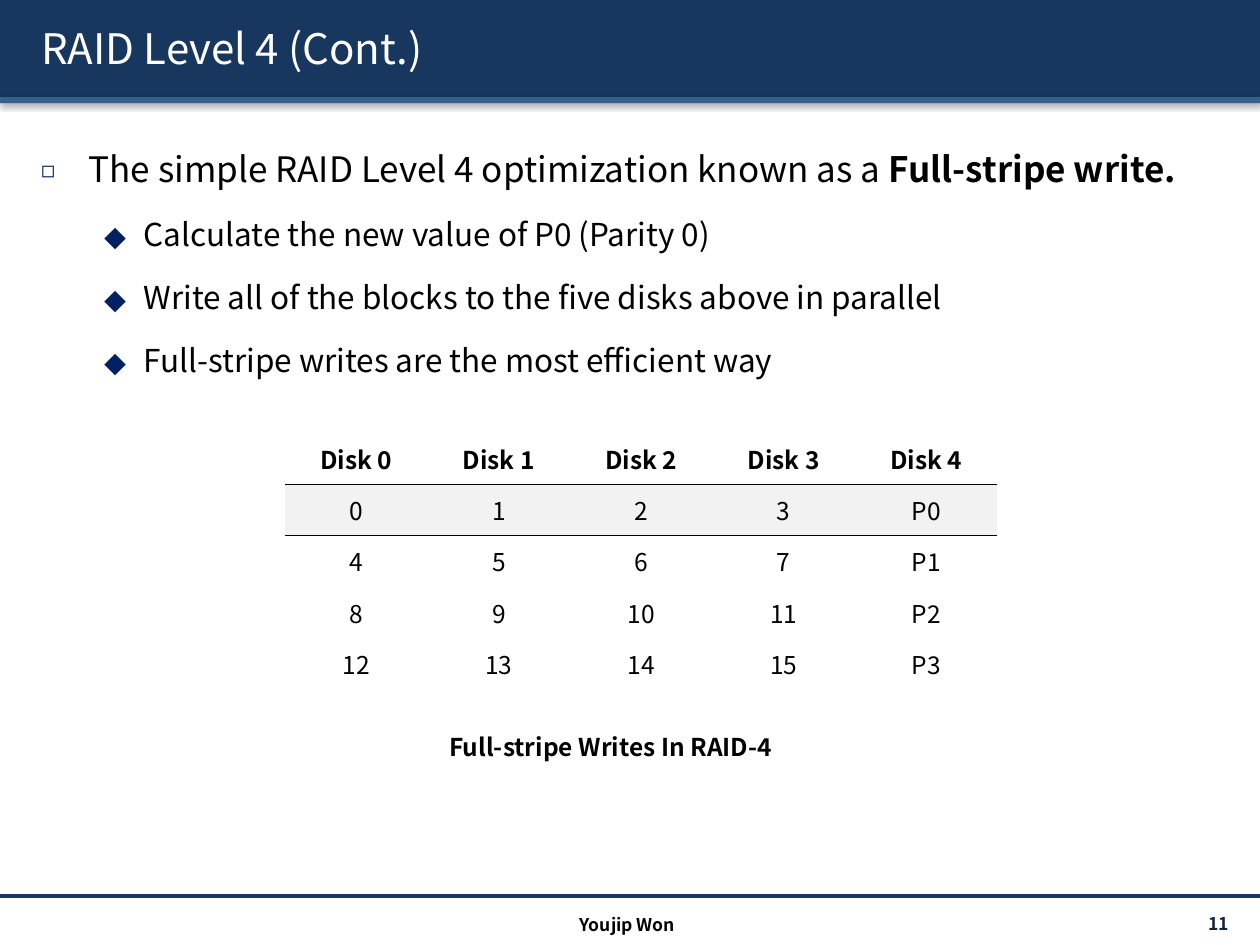
import pptx
import pptx.dml.color
import pptx.enum.shapes
import pptx.enum.text
import pptx.oxml
import pptx.oxml.ns
import pptx.util
from lxml import etree

Pt = pptx.util.Pt
RGBColor = pptx.dml.color.RGBColor
ALIGN = pptx.enum.text.PP_ALIGN
ANCHOR = pptx.enum.text.MSO_ANCHOR

NAVY = RGBColor(0x17, 0x37, 0x5E)
BLUE = RGBColor(0x37, 0x60, 0x92)
BULLET = RGBColor(0x00, 0x20, 0x60)
PAGE_INK = RGBColor(0x0F, 0x24, 0x3E)
BLACK = RGBColor(0, 0, 0)
WHITE = RGBColor(0xFF, 0xFF, 0xFF)
STRIPE = RGBColor(0xF2, 0xF2, 0xF2)
PLAIN_TABLE = "{2D5ABB26-0587-4C30-8999-92F81FD0307C}"


def add_xml(parent, tag, **attributes):
    return etree.SubElement(parent, pptx.oxml.ns.qn(tag), attributes)


def set_values(target, values):
    for name, value in values.items():
        setattr(target, name, value)


def add_shadow(properties, blur, distance, alpha):
    effects = add_xml(properties, "a:effectLst")
    shadow = add_xml(effects, "a:outerShdw", blurRad=str(Pt(blur)),
                     dist=str(Pt(distance)), dir="5400000", rotWithShape="0")
    color = add_xml(shadow, "a:srgbClr", val=str(BLACK))
    add_xml(color, "a:alpha", val=str(alpha * 1000))


class SlideWriter:
    """Holds the text style and the slide being drawn."""

    font = "Noto Sans CJK KR"

    def __init__(self, slide):
        self.slide = slide

    def style(self, font, size, color=BLACK, bold=False):
        set_values(font, {"name": self.font, "size": Pt(size), "bold": bold})
        font.color.rgb = color

    def bar(self, top, height, color):
        band = self.slide.shapes.add_shape(
            pptx.enum.shapes.MSO_SHAPE.RECTANGLE, 0, Pt(top), Pt(720), Pt(height))
        band.fill.solid()
        band.fill.fore_color.rgb = color
        band.line.fill.background()
        add_shadow(band.element.spPr, 3.1, 1.6, 38)

    def rule(self, top, color, width):
        edge = self.slide.shapes.add_connector(
            pptx.enum.shapes.MSO_CONNECTOR.STRAIGHT, 0, Pt(top), Pt(720), Pt(top))
        edge.line.color.rgb = color
        edge.line.width = Pt(width)
        add_xml(edge.element.spPr, "a:effectLst")

    def frame(self, box, **values):
        frame = self.slide.shapes.add_textbox(*map(Pt, box)).text_frame
        set_values(frame, {"word_wrap": True, **values})
        return frame

    def label(self, box, text, size, color=BLACK, bold=True, align=ALIGN.CENTER, **values):
        paragraph = self.frame(box, **values).paragraphs[0]
        paragraph.alignment = align
        run = paragraph.add_run()
        run.text = text
        self.style(run.font, size, color, bold)
        return run

    def bullets(self, box, items, formats):
        frame = self.frame(box)
        for index, (level, parts) in enumerate(items):
            look = formats[level]
            paragraph = frame.paragraphs[0] if index == 0 else frame.add_paragraph()
            set_values(paragraph, {"level": level, "line_spacing": 1.5,
                                   "space_before": Pt(look["size"] * 0.2 if index else 0)})
            properties = paragraph._p.get_or_add_pPr()
            properties.set("marL", str(Pt(look["margin"])))
            properties.set("indent", str(-Pt(look["hang"])))
            add_xml(add_xml(properties, "a:buClr"), "a:srgbClr", val=str(BULLET))
            add_xml(properties, "a:buSzPct", val=str(look["scale"] * 1000))
            add_xml(properties, "a:buFont", typeface=self.font)
            add_xml(properties, "a:buChar", char=look["mark"])
            for text, bold in parts:
                run = paragraph.add_run()
                run.text = text
                self.style(run.font, look["size"], BLACK, bold)

    def table(self, box, rows, fills):
        frame = self.slide.shapes.add_table(len(rows), len(rows[0]), *map(Pt, box))
        grid = frame.table
        set_values(grid, {"first_row": False, "horz_banding": False})
        grid._tbl.tblPr.find(pptx.oxml.ns.qn("a:tableStyleId")).text = PLAIN_TABLE
        for r, values in enumerate(rows):
            for c, value in enumerate(values):
                cell = grid.cell(r, c)
                cell.text = value
                cell.vertical_anchor = ANCHOR.MIDDLE
                paragraph = cell.text_frame.paragraphs[0]
                paragraph.alignment = ALIGN.CENTER
                self.style(paragraph.runs[0].font, 14, BLACK, r == 0)
                if r < 2:
                    self.border(cell, "a:lnT" if r else "a:lnB")
                cell.fill.solid()
                cell.fill.fore_color.rgb = fills[r]

    def border(self, cell, side):
        line = add_xml(cell._tc.get_or_add_tcPr(), side, w=str(Pt(0.75)))
        add_xml(add_xml(line, "a:solidFill"), "a:srgbClr", val=str(BLACK))


def main():
    deck = pptx.Presentation()
    set_values(deck, {"slide_width": Pt(720), "slide_height": Pt(540)})
    page = SlideWriter(deck.slides.add_slide(deck.slide_layouts[6]))

    # Header bands and footer rule
    page.bar(0, 55.5, NAVY)
    page.bar(55.5, 3.5, BLUE)
    page.rule(512, NAVY, 2)

    # Title
    title = page.label((16.5, 4.5, 692, 46), "RAID Level 4 (Cont.)", 24, WHITE, False,
                       ALIGN.LEFT, vertical_anchor=ANCHOR.MIDDLE)
    fill = title.font._element.find(pptx.oxml.ns.qn("a:solidFill"))
    add_shadow(title.font._element, 3, 2, 50)
    fill.addnext(title.font._element.find(pptx.oxml.ns.qn("a:effectLst")))

    # Key points
    formats = [
        {"size": 20, "margin": 27, "hang": 27, "mark": "◻", "scale": 65},
        {"size": 18, "margin": 58.5, "hang": 22.5, "mark": "⬥", "scale": 100},
    ]
    page.bullets((16.5, 69, 692, 433.5), [
        (0, [("The simple RAID Level 4 optimization known as a ", False),
             ("Full-stripe write.", True)]),
        (1, [("Calculate the new value of P0 (Parity 0)", False)]),
        (1, [("Write all of the blocks to the five disks above in parallel", False)]),
        (1, [("Full-stripe writes are the most efficient way", False)]),
    ], formats)

    # Block layout: four data disks and one parity disk
    data_disks, stripes = 4, 4
    header = [f"Disk {disk}" for disk in range(data_disks + 1)]
    blocks = [[str(stripe * data_disks + disk) for disk in range(data_disks)] + [f"P{stripe}"]
              for stripe in range(stripes)]
    page.table((163, 247.5, 407, 146.5), [header] + blocks,
               [WHITE, STRIPE] + [WHITE] * (stripes - 1))
    page.label((185, 414.5, 328, 24.5), "Full-stripe Writes In RAID-4", 14,
               auto_size=pptx.enum.text.MSO_AUTO_SIZE.SHAPE_TO_FIT_TEXT)

    # Footer
    page.label((239, 518.5, 239, 17.5), "Youjip Won", 10)
    page.label((627, 519, 84.5, 17.5), "11 ", 10, PAGE_INK, align=ALIGN.RIGHT,
               vertical_anchor=ANCHOR.MIDDLE)

    deck.save("out.pptx")


if __name__ == "__main__":
    main()
